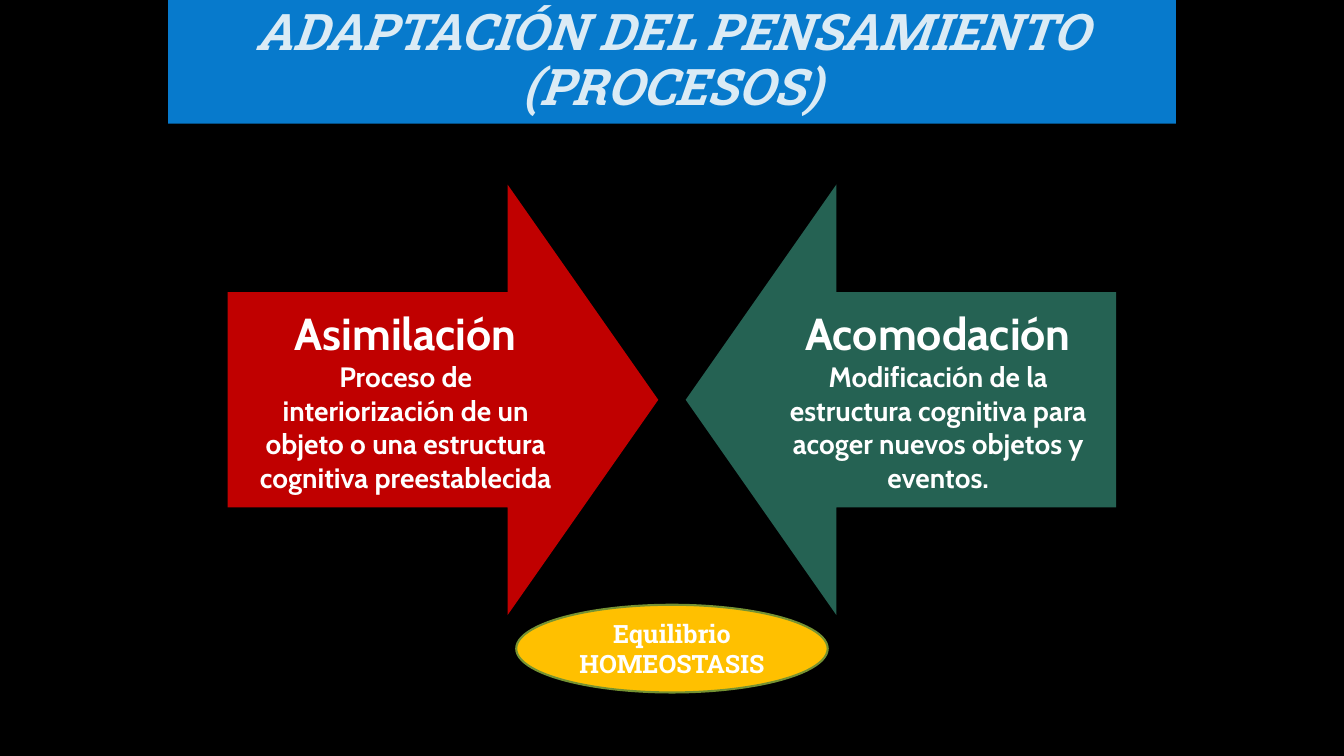
"""Builds a slide on the two processes of the adaptation of thought."""
from pptx import Presentation
from pptx import util as u
from pptx.dml import color
from pptx.enum import shapes, text

TITLE = "ADAPTACIÓN DEL PENSAMIENTO (PROCESOS)"
PROCESSES = [
    ("Asimilación",
     "Proceso de interiorización de un objeto o una estructura cognitiva preestablecida",
     "C00000"),
    ("Acomodación",
     "Modificación de la estructura cognitiva para acoger nuevos objetos y eventos.",
     "256253"),
]
BALANCE = ["Equilibrio", "HOMEOSTASIS"]
HEADING_FONT, BODY_FONT = "Roboto Slab", "Cabin"

SLIDE_W, SLIDE_H = 33.87, 19.05
TITLE_W, TITLE_H = 25.4, 3.12
MARGIN = 5.74
ARROW_SIZE, ARROW_TOP = 10.85, 4.65
LABEL_W, LABEL_H, LABEL_INSET = 8.97, 5.43, 0.63
BALANCE_W, BALANCE_H, BALANCE_TOP = 7.85, 2.21, 15.24


def paint(target, hex_color):
    if hasattr(target, "solid"):
        target.solid()
        target = target.fore_color
    target.rgb = color.RGBColor.from_string(hex_color)


def add_block(kind, left, top, width, height, fill):
    block = slide.shapes.add_shape(kind, u.Cm(left), u.Cm(top), u.Cm(width), u.Cm(height))
    block.shadow.inherit = False
    block.line.fill.background()
    paint(block.fill, fill)
    return block


def write(holder, lines, sizes, font_name, ink="FFFFFF", italic=False):
    frame = holder.text_frame
    frame.text = "\n".join(lines)
    frame.word_wrap = True
    frame.vertical_anchor = text.MSO_ANCHOR.MIDDLE
    for paragraph, size in zip(frame.paragraphs, sizes):
        paragraph.alignment = text.PP_ALIGN.CENTER
        font = paragraph.runs[0].font
        font.name, font.size = font_name, u.Pt(size)
        font.bold, font.italic = True, italic
        paint(font.color, ink)
    return frame


deck = Presentation()
deck.slide_width, deck.slide_height = u.Cm(SLIDE_W), u.Cm(SLIDE_H)
slide = deck.slides.add_slide(deck.slide_layouts[6])
paint(slide.background.fill, "000000")

banner = add_block(shapes.MSO_SHAPE.RECTANGLE, (SLIDE_W - TITLE_W) / 2, 0,
                   TITLE_W, TITLE_H, "077ACC")
heading = write(banner, [TITLE], [36], HEADING_FONT, "DBEBF5", italic=True)
heading.paragraphs[0].line_spacing = 0.9

arrow_lefts = (MARGIN, SLIDE_W - MARGIN - ARROW_SIZE)
label_lefts = (MARGIN, SLIDE_W - MARGIN - LABEL_W)
label_top = ARROW_TOP + (ARROW_SIZE - LABEL_H) / 2
for (name, meaning, fill), arrow_left, label_left, turn in zip(
        PROCESSES, arrow_lefts, label_lefts, (270, 90)):
    arrow = add_block(shapes.MSO_SHAPE.DOWN_ARROW, arrow_left, ARROW_TOP,
                      ARROW_SIZE, ARROW_SIZE, fill)
    arrow.adjustments[0], arrow.adjustments[1] = 0.5, 0.35
    arrow.rotation = turn
    label = slide.shapes.add_textbox(u.Cm(label_left), u.Cm(label_top),
                                     u.Cm(LABEL_W), u.Cm(LABEL_H))
    frame = write(label, [name, meaning], [32, 20], BODY_FONT)
    frame.margin_left = frame.margin_right = u.Cm(LABEL_INSET)
    frame.margin_top = frame.margin_bottom = u.Cm(LABEL_INSET)

balance = add_block(shapes.MSO_SHAPE.OVAL, (SLIDE_W - BALANCE_W) / 2, BALANCE_TOP,
                    BALANCE_W, BALANCE_H, "FFC000")
paint(balance.line.fill, "759232")
balance.line.width = u.Pt(1.5)
write(balance, BALANCE, [18, 18], HEADING_FONT)

deck.save("out.pptx")
